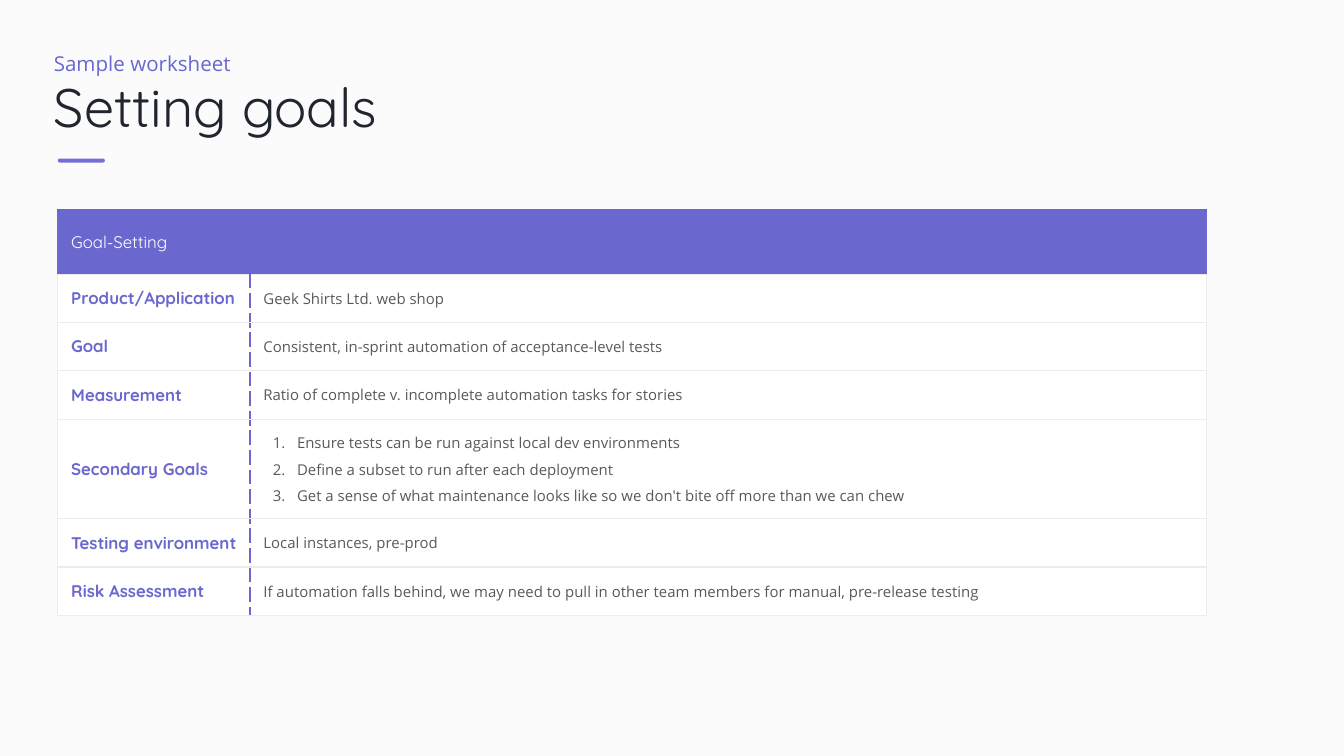
from dataclasses import dataclass

from lxml.etree import SubElement
from pptx import Presentation
from pptx.dml.color import RGBColor
from pptx.enum.shapes import MSO_SHAPE
from pptx.enum.text import MSO_ANCHOR
from pptx.oxml.ns import qn
from pptx.util import Inches, Pt

COLORS = {
    "background": "FBFBFC",
    "accent": "736ED8",
    "purple": "6A67CE",
    "ink": "20252E",
    "body": "595959",
    "rule": "ECECEC",
    "white": "FFFFFF",
}
HEADING_FONT = "Quicksand"
BODY_FONT = "Open Sans"
COLUMN_WIDTHS = (1.43, 7.12)
HEADER_HEIGHT = 0.48


@dataclass(frozen=True)
class Goal:
    label: str
    entries: tuple[str, ...]
    height: float = 0.36


GOALS = (
    Goal("Product/Application", ("Geek Shirts Ltd. web shop",)),
    Goal("Goal", ("Consistent, in-sprint automation of acceptance-level tests",)),
    Goal("Measurement", ("Ratio of complete v. incomplete automation tasks for stories",)),
    Goal(
        "Secondary Goals",
        (
            "Ensure tests can be run against local dev environments",
            "Define a subset to run after each deployment",
            "Get a sense of what maintenance looks like so we don't bite off more than we can chew",
        ),
        height=0.74,
    ),
    Goal("Testing environment", ("Local instances, pre-prod",)),
    Goal(
        "Risk Assessment",
        ("If automation falls behind, we may need to pull in other team members for manual, pre-release testing",),
    ),
)


def rgb(name: str) -> RGBColor:
    return RGBColor.from_string(COLORS[name])


def write(p, text: str, *, size: float, font: str, color: str, bold: bool = False) -> None:
    r = p.add_run()
    r.text = text
    r.font.size = Pt(size)
    r.font.name = font
    r.font.bold = bold
    r.font.color.rgb = rgb(color)


def add_text(s, text: str, left: float, top: float, width: float, height: float,
             *, inset: float = 0, anchor=MSO_ANCHOR.TOP, spacing: float = 1.0, **style) -> None:
    tf = s.shapes.add_textbox(Inches(left), Inches(top), Inches(width), Inches(height)).text_frame
    tf.word_wrap = True
    tf.margin_left = tf.margin_right = 0
    tf.margin_top = tf.margin_bottom = Inches(inset)
    tf.vertical_anchor = anchor
    tf.paragraphs[0].line_spacing = spacing
    write(tf.paragraphs[0], text, **style)


def number(p) -> None:
    pPr = p._p.get_or_add_pPr()
    pPr.set("marL", str(Inches(0.25)))
    pPr.set("indent", str(Inches(-0.18)))
    bullet_color = SubElement(pPr, qn("a:buClr"))
    SubElement(bullet_color, qn("a:srgbClr"), val=COLORS["body"])
    SubElement(pPr, qn("a:buFont"), typeface=BODY_FONT)
    SubElement(pPr, qn("a:buAutoNum"), type="arabicPeriod")


def style_cell(cell, fill: str, *, left: str, right: str, top: str, bottom: str, dashed: str = "") -> None:
    tcPr = cell._tc.get_or_add_tcPr()
    for side, color in (("L", left), ("R", right), ("T", top), ("B", bottom)):
        ln = SubElement(tcPr, qn(f"a:ln{side}"), w=str(Pt(0.75)))
        solid = SubElement(ln, qn("a:solidFill"))
        SubElement(solid, qn("a:srgbClr"), val=COLORS[color])
        SubElement(ln, qn("a:prstDash"), val="dash" if side == dashed else "solid")
    cell.fill.solid()
    cell.fill.fore_color.rgb = rgb(fill)


def fill_cell(cell, entries: tuple[str, ...], **style) -> None:
    cell.margin_left = cell.margin_right = Inches(0.1)
    cell.margin_top = cell.margin_bottom = Inches(0.1)
    cell.vertical_anchor = MSO_ANCHOR.MIDDLE
    tf = cell.text_frame
    for i, entry in enumerate(entries):
        p = tf.add_paragraph() if i else tf.paragraphs[0]
        if i:
            p.space_before = Pt(3)
        if len(entries) > 1:
            number(p)
        write(p, entry, **style)


def add_goal_table(s, left: float, top: float) -> None:
    heights = [HEADER_HEIGHT, *(goal.height for goal in GOALS)]
    table = s.shapes.add_table(
        len(heights), len(COLUMN_WIDTHS), Inches(left), Inches(top),
        Inches(sum(COLUMN_WIDTHS)), Inches(sum(heights)),
    ).table
    table.first_row = table.horz_banding = False
    for column, width in zip(table.columns, COLUMN_WIDTHS):
        column.width = Inches(width)
    for row, height in zip(table.rows, heights):
        row.height = Inches(height)

    for cell in table.rows[0].cells:
        style_cell(cell, "purple", left="purple", right="purple", top="purple", bottom="rule")
    fill_cell(table.cell(0, 0), ("Goal-Setting",), size=9, font=HEADING_FONT, color="white")

    for i, goal in enumerate(GOALS, start=1):
        label, detail = table.cell(i, 0), table.cell(i, 1)
        style_cell(label, "white", left="rule", right="purple", top="rule", bottom="rule", dashed="R")
        style_cell(detail, "white", left="purple", right="rule", top="rule", bottom="rule", dashed="L")
        fill_cell(label, (goal.label,), size=9, font=HEADING_FONT, color="purple", bold=True)
        fill_cell(detail, goal.entries, size=8, font=BODY_FONT, color="body")


def add_accent_bar(s, left: float, top: float, width: float, height: float) -> None:
    sp = s.shapes.add_shape(
        MSO_SHAPE.ROUNDED_RECTANGLE, Inches(left), Inches(top), Inches(width), Inches(height)
    )
    sp.adjustments[0] = 0.5
    sp.shadow.inherit = False
    sp.fill.solid()
    sp.fill.fore_color.rgb = rgb("accent")
    sp.line.fill.background()


def main() -> None:
    prs = Presentation()
    prs.slide_width = Inches(10)
    prs.slide_height = Inches(10 * 9 / 16)
    s = prs.slides.add_slide(prs.slide_layouts[6])
    s.background.fill.solid()
    s.background.fill.fore_color.rgb = rgb("background")

    add_accent_bar(s, 0.43, 1.18, 0.35, 0.03)
    add_text(s, "Sample worksheet", 0.4, 0.35, 8.55, 0.18, spacing=1.15,
             size=11, font=BODY_FONT, color="purple")
    add_text(s, "Setting goals", 0.4, 0.5, 9.25, 0.63, inset=0.1, anchor=MSO_ANCHOR.BOTTOM,
             size=29, font=HEADING_FONT, color="ink")
    add_goal_table(s, 0.43, 1.56)
    prs.save("out.pptx")


if __name__ == "__main__":
    main()
